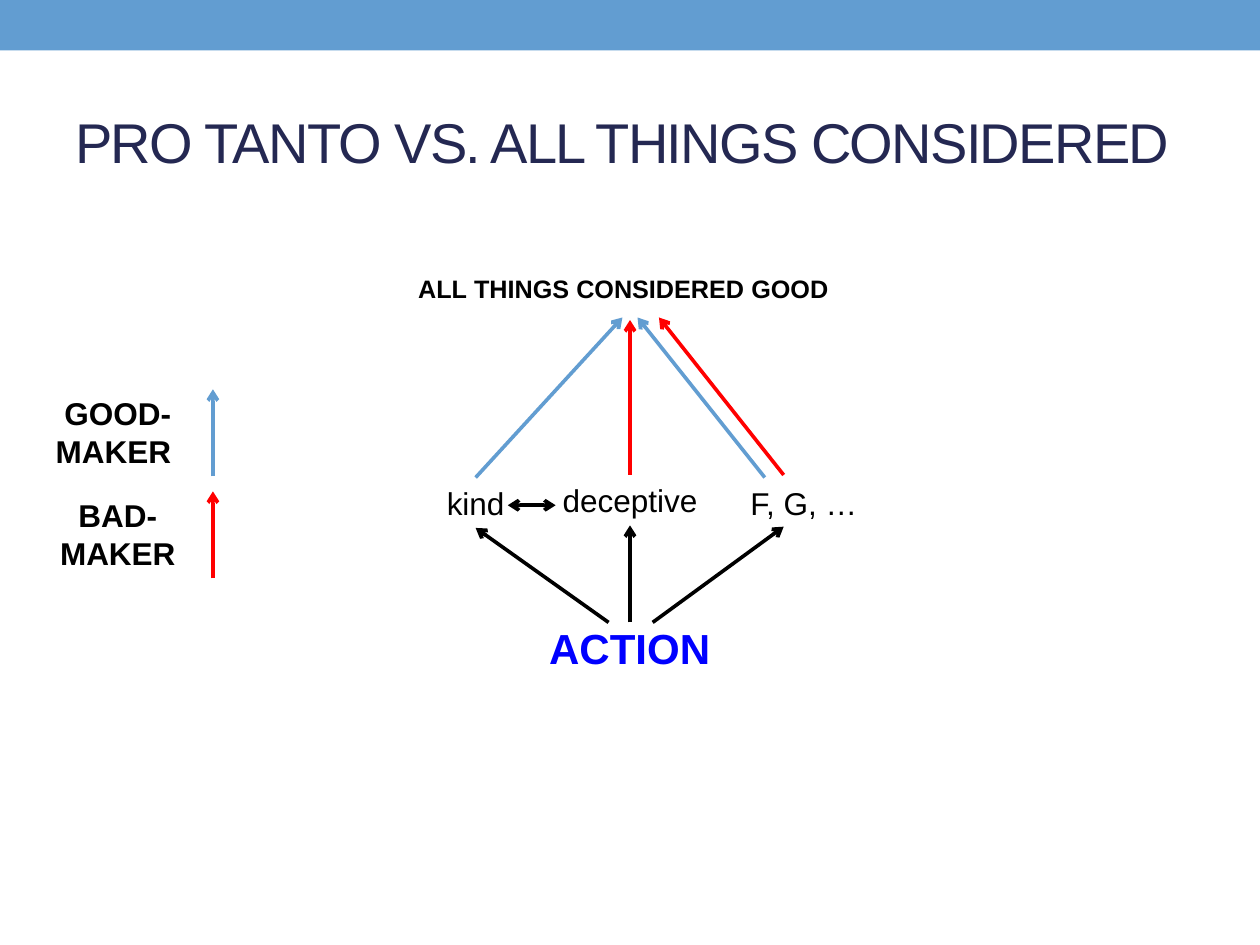
from lxml import etree
from pptx import Presentation
from pptx.dml.color import RGBColor
from pptx.enum import shapes, text
from pptx.oxml.ns import qn
from pptx.util import Inches, Pt

BLUE, RED, BLACK, NAVY, ACTION_BLUE = "629DD1", "FF0000", "000000", "242852", "0000FF"
TOP, BOTTOM = 0, 2  # connection sites of a rectangle


def color(hex_string):
    return RGBColor.from_string(hex_string)


def add_label(slide, box, words, size=18, ink=BLACK, bold=False, centered=True, wrap=True):
    label = slide.shapes.add_textbox(*map(Inches, box))
    frame = label.text_frame
    frame.word_wrap = wrap
    frame.text = words
    paragraph = frame.paragraphs[0]
    paragraph.alignment = text.PP_ALIGN.CENTER if centered else text.PP_ALIGN.LEFT
    font = paragraph.runs[0].font
    font.name, font.size, font.bold = "Arial", Pt(size), bold
    font.color.rgb = color(ink)
    return label


def run_properties(label):
    return label.text_frame.paragraphs[0].runs[0].font._element


def add_arrow(slide, start, end, ink=BLACK, both_ends=False):
    arrow = slide.shapes.add_connector(
        shapes.MSO_CONNECTOR.STRAIGHT, *map(Inches, (*start, *end)))
    arrow.line.color.rgb = color(ink)
    arrow.line.width = Pt(2.08)
    line = arrow.line._get_or_add_ln()
    for tag in ("a:headEnd", "a:tailEnd") if both_ends else ("a:tailEnd",):
        etree.SubElement(line, qn(tag), type="arrow")
    etree.SubElement(arrow._element.spPr, qn("a:effectLst"))
    return arrow


def add_header(slide, left, top, width):
    # Colour band
    band = slide.shapes.add_shape(
        shapes.MSO_SHAPE.RECTANGLE, *map(Inches, (left, top, width, 0.4)))
    band.shadow.inherit = False
    band.fill.solid()
    band.fill.fore_color.rgb = color(BLUE)
    band.line.fill.background()

    # Title with tightened letters
    title = add_label(slide, (left + 0.5, top + 0.58, width - 1, 1.08),
                      "PRO TANTO VS. ALL THINGS CONSIDERED", 32, NAVY, centered=False)
    title.text_frame.vertical_anchor = text.MSO_ANCHOR.MIDDLE
    run_properties(title).set("spc", "-100")


def add_legend(slide, left, top, width):
    entries = (("GOOD-MAKER ", BLUE), ("BAD-MAKER", RED))
    for row, (words, ink) in enumerate(entries):
        entry_top = top + row * 0.81
        add_label(slide, (left, entry_top, width, 0.71), words, bold=True)
        arrow_top = entry_top + 0.01
        add_arrow(slide, (left + width, arrow_top + 0.69), (left + width, arrow_top), ink)


def add_diagram(slide, left, top):
    def at(x, y):
        return left + x, top + y

    # Verdict, properties and action
    verdict = add_label(slide, (*at(0, 0), 3.55, 0.4), "all things considered good",
                        bold=True, centered=False)
    run_properties(verdict).set("cap", "small")
    kind = add_label(slide, (*at(0.22, 1.72), 0.67, 0.4), "kind", wrap=False)
    deceptive = add_label(slide, (*at(1.14, 1.7), 1.28, 0.4), "deceptive", wrap=False)
    add_label(slide, (*at(2.63, 1.72), 1.06, 0.4), "F, G, …", wrap=False)
    add_label(slide, (*at(1.04, 2.82), 1.59, 0.5), "ACTION", 24, ACTION_BLUE,
              bold=True, centered=False)

    # Action to properties
    action_y, property_y = 2.87, 2.11
    to_kind = add_arrow(slide, at(1.61, action_y), at(0.55, property_y))
    to_kind.end_connect(kind, BOTTOM)
    to_deceptive = add_arrow(slide, at(1.78, action_y), at(1.78, property_y))
    to_deceptive.end_connect(deceptive, BOTTOM)
    add_arrow(slide, at(1.96, action_y), at(3, property_y))

    # Kind and deceptive interact
    add_arrow(slide, at(0.81, 1.94), at(1.19, 1.94), both_ends=True)

    # Properties to verdict
    kind_good = add_arrow(slide, at(0.55, 1.72), at(1.72, 0.45), BLUE)
    kind_good.begin_connect(kind, TOP)
    deceptive_bad = add_arrow(slide, at(1.78, 1.72), at(1.78, 0.47), RED)
    deceptive_bad.begin_connect(deceptive, TOP)
    add_arrow(slide, at(2.85, 1.72), at(1.84, 0.45), BLUE)
    add_arrow(slide, at(3, 1.7), at(2.01, 0.45), RED)


def main():
    deck = Presentation()
    deck.slide_width, deck.slide_height = Inches(10), Inches(7.5)
    slide = deck.slides.add_slide(deck.slide_layouts[6])
    add_header(slide, 0, 0, 10)
    add_legend(slide, 0.18, 3.08, 1.51)
    add_diagram(slide, 3.22, 2.07)
    deck.save("out.pptx")


if __name__ == "__main__":
    main()
